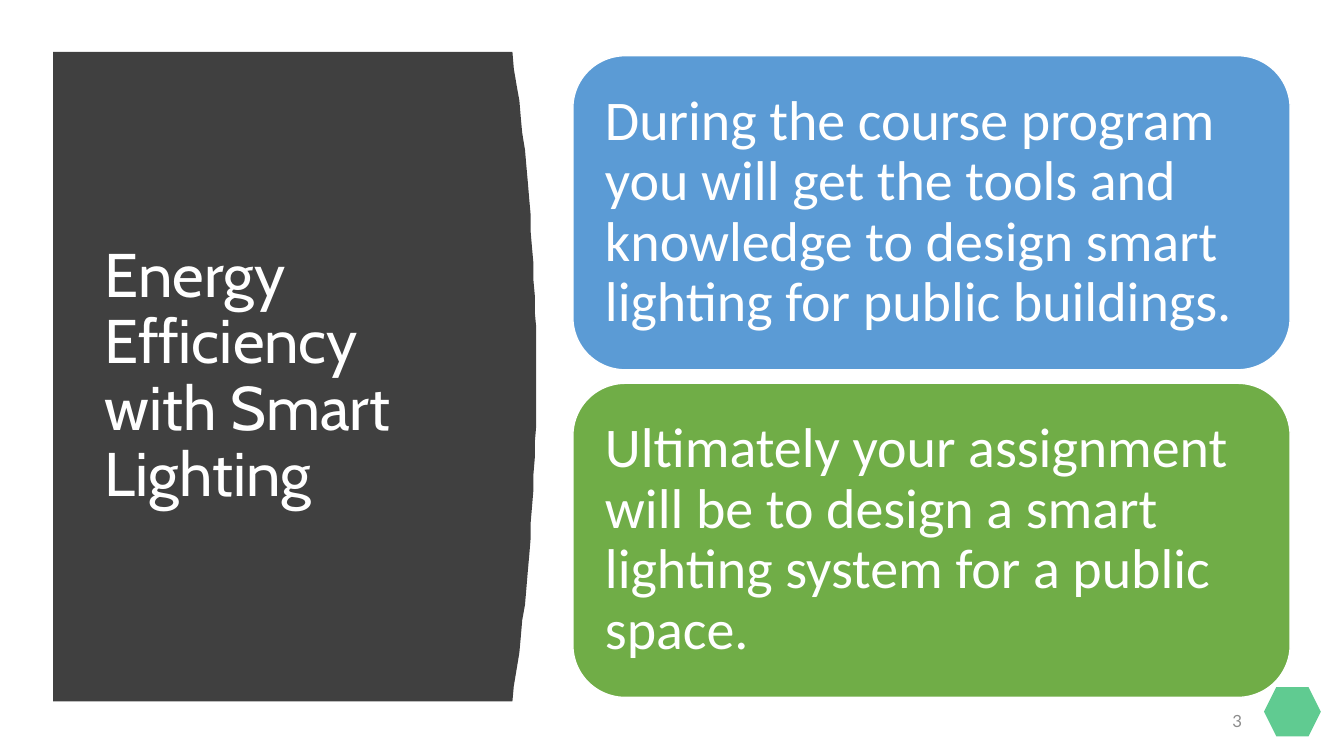
from pptx import Presentation
from pptx.dml.color import RGBColor
from pptx.enum.shapes import MSO_SHAPE as Shape
from pptx.enum.text import MSO_ANCHOR as Anchor, MSO_AUTO_SIZE as Auto, PP_ALIGN as Align
from pptx.oxml import parse_xml
from pptx.util import Pt

NS = "http://schemas.openxmlformats.org/drawingml/2006/main"
STEPS = 40
BULGE = 17.3
CARDS = [
    ("5B9BD5", "During the course program you will get the tools and "
     "knowledge to design smart lighting for public buildings."),
    ("70AD47", "Ultimately your assignment will be to design a smart "
     "lighting system for a public space."),
]


def color(code):
    return RGBColor.from_string(code)


def apply(item, form):
    for name, value in form.items():
        setattr(item, name, value)


def paint(shape, fill, line=None):
    shape.shadow.inherit = False
    shape.fill.solid()
    shape.fill.fore_color.rgb = color(fill)
    if line:
        shape.line.color.rgb = color(line)
        shape.line.width = Pt(1)
    else:
        shape.line.fill.background()


def write(shape, text, font, size, ink, align=Align.LEFT, space=1.0, pad=(7.2, 3.6)):
    frame = shape.text_frame
    across, down = map(Pt, pad)
    apply(frame, dict(text=text, word_wrap=True, auto_size=Auto.NONE,
                      vertical_anchor=Anchor.MIDDLE,
                      margin_left=across, margin_right=across,
                      margin_top=down, margin_bottom=down))
    para = frame.paragraphs[0]
    apply(para, dict(alignment=align, line_spacing=space))
    run = para.runs[0]
    apply(run.font, dict(name=font, size=Pt(size)))
    run.font.color.rgb = color(ink)


def add_panel(slide, left, top, width, height):
    edge = left + width - BULGE
    curve = []
    for step in range(STEPS + 1):
        part = step / STEPS
        curve.append((edge + 4 * BULGE * part * (1 - part), top + height * part))
    path = slide.shapes.build_freeform(left, top, scale=Pt(1))
    path.add_line_segments(curve + [(left, top + height)], close=True)
    paint(path.convert_to_shape(), "404040")

    title = slide.shapes.title
    apply(title, dict(left=Pt(left + 29.5), top=Pt(top + 42.5),
                      width=Pt(269.3), height=Pt(height - 85)))
    write(title, "Energy Efficiency with Smart Lighting", "Cabin", 44, "FFFFFF", space=0.9)
    title.element.getparent().append(title.element)


def add_cards(slide, left, top, width, height, gap):
    tall = (height - gap * (len(CARDS) - 1)) / len(CARDS)
    for row, (fill, text) in enumerate(CARDS):
        card = slide.shapes.add_shape(Shape.ROUNDED_RECTANGLE, Pt(left),
                                      Pt(top + row * (tall + gap)), Pt(width), Pt(tall))
        paint(card, fill, "FFFFFF")
        write(card, text, "Calibri", 40, "FFFFFF", space=0.9, pad=(12, 12))


def add_badge(slide, left, top, width, height):
    badge = slide.shapes.add_shape(Shape.HEXAGON, Pt(left), Pt(top), Pt(width), Pt(height))
    paint(badge, "4DC584")
    tint = badge.fill._xPr.find(f".//{{{NS}}}srgbClr")
    tint.append(parse_xml(f'<a:alpha xmlns:a="{NS}" val="89000"/>'))


def add_number(slide, left, top, width, height):
    box = slide.shapes.add_textbox(Pt(left), Pt(top), Pt(width), Pt(height))
    write(box, "3", "Lato", 12, "8C8C8C", align=Align.RIGHT)


def main():
    deck = Presentation()
    apply(deck, dict(slide_width=Pt(960), slide_height=Pt(540)))
    slide = deck.slides.add_slide(deck.slide_layouts[5])
    add_badge(slide, 902.9, 490.8, 40.6, 35.2)
    add_panel(slide, 38.2, 37.4, 344.8, 463.7)
    add_number(slide, 844.6, 500.4, 49.7, 28.8)
    add_cards(slide, 409.2, 39.8, 512.4, 458.4, 9.6)
    deck.save("out.pptx")


if __name__ == "__main__":
    main()
